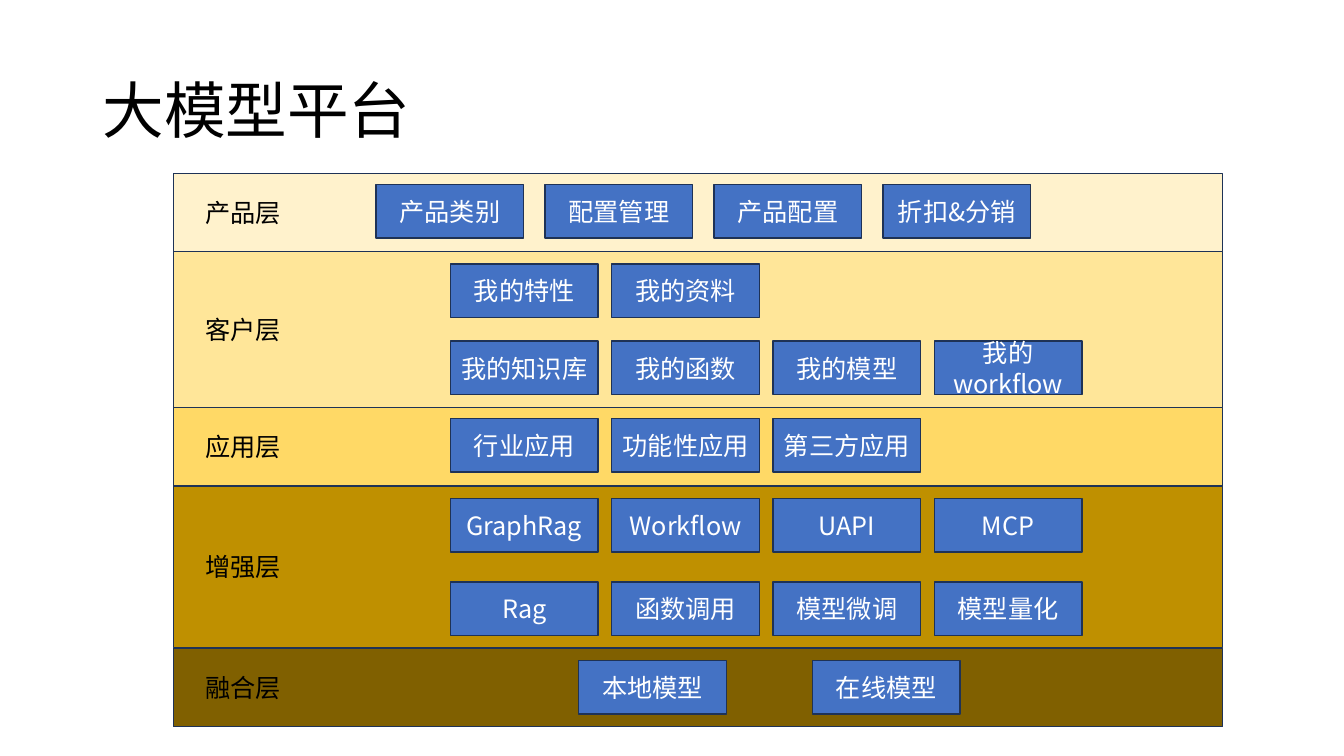
from lxml.etree import SubElement
from pptx import Presentation
from pptx.dml.color import RGBColor
from pptx.enum.shapes import MSO_SHAPE as Preset
from pptx.enum.text import MSO_ANCHOR as Anchor, MSO_AUTO_SIZE as AutoSize, PP_ALIGN as Align
from pptx.oxml.ns import qn
from pptx.util import Pt

FONT = "Noto Sans CJK SC"
BAND_LEFT, BAND_WIDTH = 123.84, 749.5
LABEL_LEFT, LABEL_WIDTH, LABEL_HEIGHT = 139.7, 75.6, 28.8
BOX_WIDTH, BOX_HEIGHT = 105.5, 38.4

LAYERS = [
    ("产品层", "FFF2CC", 123.84, 56.16, [
        (268.6, 120.7, 131.6, ["产品类别", "配置管理", "产品配置", "折扣&分销"])]),
    ("客户层", "FFE699", 179.5, 112, [
        (321.8, 115.2, 188.5, ["我的特性", "我的资料"]),
        (321.8, 115.2, 243.6, ["我的知识库", "我的函数", "我的模型", "我的workflow"])]),
    ("应用层", "FFD966", 290.9, 56.16, [
        (321.8, 115.2, 298.8, ["行业应用", "功能性应用", "第三方应用"])]),
    ("增强层", "BF9000", 347.3, 115.4, [
        (321.8, 115.2, 356, ["GraphRag", "Workflow", "UAPI", "MCP"]),
        (321.8, 115.2, 415.6, ["Rag", "函数调用", "模型微调", "模型量化"])]),
    ("融合层", "806000", 463, 56.16, [
        (413.3, 167, 471.6, ["本地模型", "在线模型"])]),
]


def write(shape, text, size, color, align, anchor):
    frame = shape.text_frame
    frame.word_wrap = True
    frame.auto_size = AutoSize.NONE
    frame.vertical_anchor = anchor
    para = frame.paragraphs[0]
    para.alignment = align
    span = para.add_run()
    span.text = text
    span.font.size = Pt(size)
    span.font.name = FONT
    span.font.color.rgb = RGBColor.from_string(color)
    SubElement(span.font._element, qn("a:ea"), typeface=FONT)
    return para


def add_rectangle(left, top, width, height, fill):
    shape = page.shapes.add_shape(Preset.RECTANGLE, Pt(left), Pt(top), Pt(width), Pt(height))
    shape.shadow.inherit = False
    shape.fill.solid()
    shape.fill.fore_color.rgb = RGBColor.from_string(fill)
    shape.line.color.rgb = RGBColor.from_string("1E3256")
    shape.line.width = Pt(1)
    return shape


deck = Presentation()
deck.slide_width, deck.slide_height = Pt(960), Pt(540)
page = deck.slides.add_slide(deck.slide_layouts[5])

title = page.shapes.title
title.left, title.top, title.width, title.height = Pt(66), Pt(28.8), Pt(828), Pt(104.4)
title_para = write(title, "大模型平台", 44, "000000", Align.LEFT, Anchor.MIDDLE)
title_para.line_spacing = 0.9

for name, fill, top, height, rows in LAYERS:
    add_rectangle(BAND_LEFT, top, BAND_WIDTH, height, fill)
    label_top = top + (height - LABEL_HEIGHT) / 2
    label = page.shapes.add_textbox(Pt(LABEL_LEFT), Pt(label_top), Pt(LABEL_WIDTH), Pt(LABEL_HEIGHT))
    write(label, name, 18, "000000", Align.LEFT, Anchor.TOP)
    for row_left, step, row_top, modules in rows:
        for column, module in enumerate(modules):
            box = add_rectangle(row_left + column * step, row_top, BOX_WIDTH, BOX_HEIGHT, "4472C4")
            write(box, module, 18, "FFFFFF", Align.CENTER, Anchor.MIDDLE)

deck.save("out.pptx")
